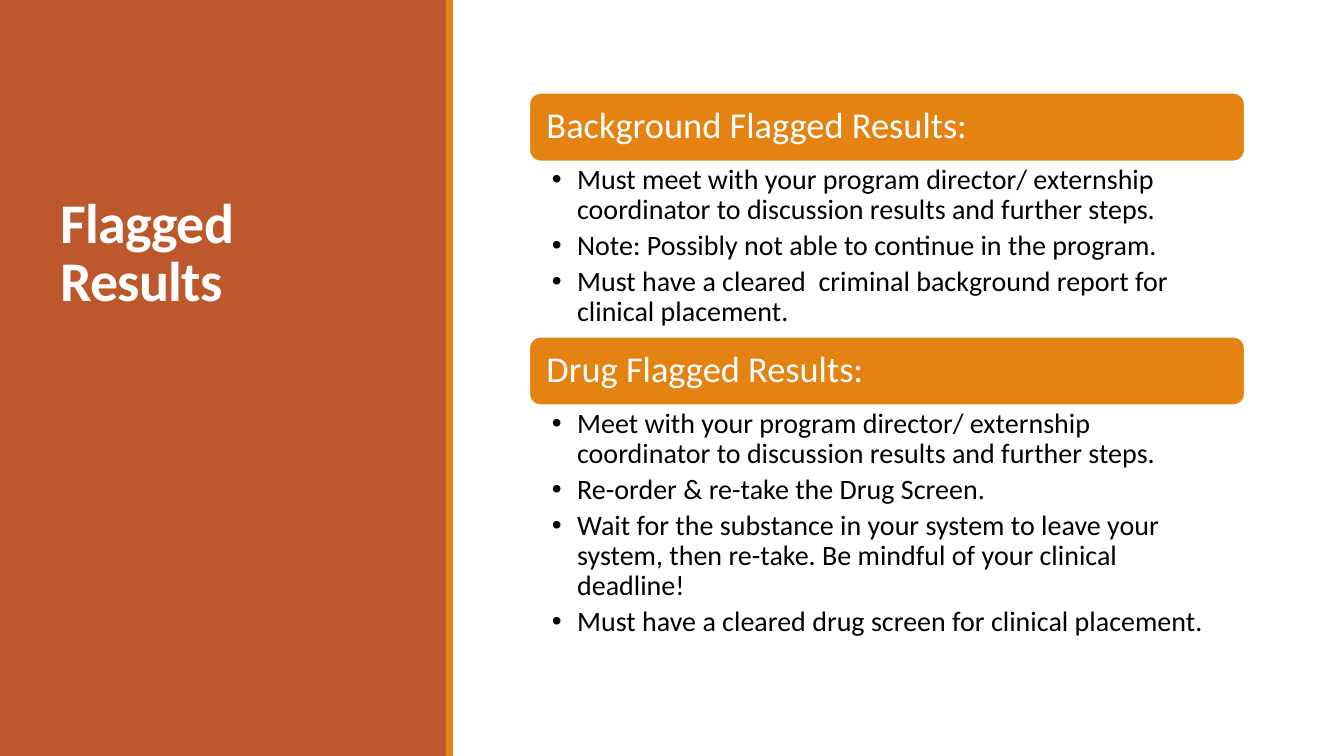
from pptx import Presentation
from pptx.dml.color import RGBColor
from pptx.enum.shapes import MSO_SHAPE
from pptx.enum.text import MSO_ANCHOR, MSO_AUTO_SIZE, PP_ALIGN
from pptx.util import Pt

RUST = RGBColor(0xBD, 0x58, 0x2C)
ORANGE = RGBColor(0xE4, 0x83, 0x12)
WHITE = RGBColor(0xFF, 0xFF, 0xFF)
BLACK = RGBColor(0x00, 0x00, 0x00)

SLIDE_HEIGHT = 540
SECTION_LEFT, SECTION_TOP, SECTION_WIDTH = 378, 66.3, 511.2
HEADING_HEIGHT = 49

SECTIONS = [
    ("Background Flagged Results:", 125.2, [
        "Must meet with your program director/ externship coordinator to discussion results and further steps.",
        "Note: Possibly not able to continue in the program.",
        "Must have a cleared  criminal background report for clinical placement.",
    ]),
    ("Drug Flagged Results:", 173.5, [
        "Meet with your program director/ externship coordinator to discussion results and further steps.",
        "Re-order & re-take the Drug Screen.",
        "Wait for the substance in your system to leave your system, then re-take. "
        "Be mindful of your clinical deadline!",
        "Must have a cleared drug screen for clinical placement.",
    ]),
]


def place(shape, left, top, width, height):
    """Move and size a shape, in points."""
    shape.left, shape.top = Pt(left), Pt(top)
    shape.width, shape.height = Pt(width), Pt(height)


def set_margins(text_frame, left, top, right, bottom):
    """Set the insets of a text frame, in points."""
    text_frame.margin_left, text_frame.margin_top = Pt(left), Pt(top)
    text_frame.margin_right, text_frame.margin_bottom = Pt(right), Pt(bottom)


def format_text(text_frame, size, color, line_spacing, space_after=0, bold=False):
    """Format every paragraph and run of a text frame."""
    text_frame.word_wrap = True
    text_frame.auto_size = MSO_AUTO_SIZE.NONE
    for paragraph in text_frame.paragraphs:
        paragraph.alignment = PP_ALIGN.LEFT
        paragraph.line_spacing = line_spacing
        paragraph.space_before = Pt(0)
        paragraph.space_after = Pt(space_after)
        for run in paragraph.runs:
            run.font.name = "Calibri"
            run.font.size = Pt(size)
            run.font.bold = bold
            run.font.color.rgb = color


def add_filled_shape(slide, kind, left, top, width, height, color):
    """Add a flat shape without outline or shadow."""
    shape = slide.shapes.add_shape(kind, Pt(left), Pt(top), Pt(width), Pt(height))
    shape.shadow.inherit = False
    shape.fill.solid()
    shape.fill.fore_color.rgb = color
    shape.line.fill.background()
    return shape


def add_side_panel(slide):
    """Put the coloured panel and its edge behind the title."""
    for left, width, color in ((0, 319, RUST), (318.5, 5, ORANGE)):
        band = add_filled_shape(slide, MSO_SHAPE.RECTANGLE, left, 0, width, SLIDE_HEIGHT, color)
        slide.shapes.title.element.addprevious(band.element)


def fill_title(title, text):
    """Write the slide title on the side panel."""
    place(title, 36, 46.8, 252, 180)
    title.text_frame.text = text
    title.text_frame.vertical_anchor = MSO_ANCHOR.BOTTOM
    format_text(title.text_frame, 40, WHITE, 0.85, bold=True)
    for run in title.text_frame.paragraphs[0].runs:
        run.font._element.set("spc", "-50")


def add_heading(slide, text, top):
    """Add a rounded section heading."""
    heading = add_filled_shape(slide, MSO_SHAPE.ROUNDED_RECTANGLE, SECTION_LEFT, top,
                               SECTION_WIDTH, HEADING_HEIGHT, ORANGE)
    heading.line.color.rgb = WHITE
    heading.line.width = Pt(1.25)
    text_frame = heading.text_frame
    text_frame.text = text
    text_frame.vertical_anchor = MSO_ANCHOR.MIDDLE
    set_margins(text_frame, 10, 8, 10, 8)
    format_text(text_frame, 26, WHITE, 0.9)


def fill_list(body, items, top, height):
    """Write the bulleted items into a body placeholder."""
    place(body, SECTION_LEFT, top, SECTION_WIDTH, height)
    text_frame = body.text_frame
    text_frame.text = "\n".join(items)
    text_frame.vertical_anchor = MSO_ANCHOR.TOP
    set_margins(text_frame, 16.2, 2.7, 14.4, 2.7)
    format_text(text_frame, 20, BLACK, 0.9, space_after=4)
    for paragraph in text_frame.paragraphs:
        properties = paragraph._p.get_or_add_pPr()
        properties.set("marL", str(Pt(18)))
        properties.set("indent", str(Pt(-18)))


def main():
    """Build and save the slide."""
    presentation = Presentation()
    presentation.slide_width, presentation.slide_height = Pt(960), Pt(SLIDE_HEIGHT)
    slide = presentation.slides.add_slide(presentation.slide_layouts.get_by_name("Two Content"))
    add_side_panel(slide)
    fill_title(slide.shapes.title, "Flagged Results")
    bodies = [slide.placeholders[1], slide.placeholders[2]]
    top = SECTION_TOP
    for body, (heading, list_height, items) in zip(bodies, SECTIONS):
        add_heading(slide, heading, top)
        fill_list(body, items, top + HEADING_HEIGHT, list_height)
        top += HEADING_HEIGHT + list_height
    presentation.save("out.pptx")


if __name__ == "__main__":
    main()
